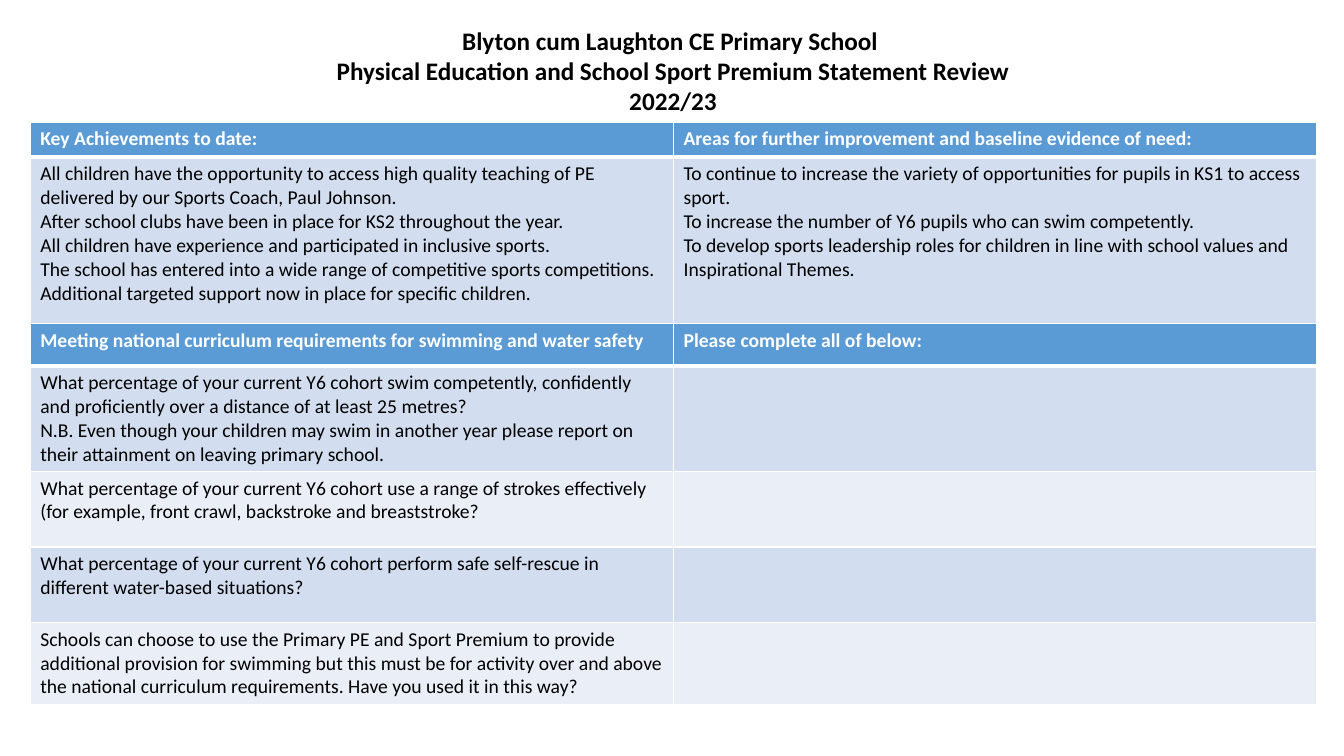
"""Build the PE and sport premium review slide with its two tables."""
from lxml import etree
from pptx import Presentation
from pptx.dml.color import RGBColor
from pptx.enum import text
from pptx.oxml.ns import qn
from pptx.util import Inches, Pt

COLORS = {"white": "FFFFFF", "black": "000000", "header": "5B9BD5",
          "band_dark": "D2DEEF", "band_light": "EAEFF7"}
FONT = "Calibri"
LEFT, COL_WIDTH = 0.3, 6.38

TITLE = [
    "Blyton cum Laughton CE Primary School ",
    "Physical Education and School Sport Premium Statement Review",
    "2022/23",
]

ACHIEVEMENTS = [
    (["Key Achievements to date:"],
     ["Areas for further improvement and baseline evidence of need:"]),
    (["All children have the opportunity to access high quality teaching of PE "
      "delivered by our Sports Coach, Paul Johnson.",
      "After school clubs have been in place for KS2 throughout the year.",
      "All children have experience and participated in inclusive sports.",
      "The school has entered into a wide range of competitive sports competitions.",
      "Additional targeted support now in place for specific children."],
     ["To continue to increase the variety of opportunities for pupils in KS1 to access sport.",
      "To increase the number of Y6 pupils who can swim competently.",
      "To develop sports leadership roles for children in line with school values and "
      "Inspirational Themes."]),
]

SWIMMING = [
    (["Meeting national curriculum requirements for swimming and water safety"],
     ["Please complete all of below:"]),
    (["What percentage of your current Y6 cohort swim competently, confidently and "
      "proficiently over a distance of at least 25 metres?",
      "N.B. Even though your children may swim in another year please report on their "
      "attainment on leaving primary school."], []),
    (["What percentage of your current Y6 cohort use a range of strokes effectively "
      "(for example, front crawl, backstroke and breaststroke?"], []),
    (["What percentage of your current Y6 cohort perform safe self-rescue in different "
      "water-based situations?"], []),
    (["Schools can choose to use the Primary PE and Sport Premium to provide additional "
      "provision for swimming but this must be for activity over and above the national "
      "curriculum requirements. Have you used it in this way?"], []),
]

TABLES = [
    (1.21, [0.35, 1.73], ACHIEVEMENTS),
    (3.21, [0.42, 1.03, 0.75, 0.75, 0.79], SWIMMING),
]


def rgb(name):
    return RGBColor.from_string(COLORS[name])


def write(tf, lines, size, color, bold, align=None):
    for i, line in enumerate(lines):
        p = tf.paragraphs[0] if i == 0 else tf.add_paragraph()
        p.alignment = align
        r = p.add_run()
        r.text = line
        r.font.name, r.font.size, r.font.bold = FONT, Pt(size), bold
        r.font.color.rgb = rgb(color)


def add_borders(cell, widths):
    tc_pr = cell._tc.get_or_add_tcPr()
    for i, (side, width) in enumerate(widths.items()):
        ln = etree.Element(qn(f"a:ln{side}"), w=str(Pt(width)))
        fill = etree.SubElement(ln, qn("a:solidFill"))
        etree.SubElement(fill, qn("a:srgbClr"), val=COLORS["white"])
        tc_pr.insert(i, ln)


def add_review_table(s, top, heights, rows):
    frame = s.shapes.add_table(len(rows), 2, Inches(LEFT), Inches(top),
                               Inches(2 * COL_WIDTH), Inches(sum(heights)))
    table = frame.table
    for col in table.columns:
        col.width = Inches(COL_WIDTH)
    for i, (height, row) in enumerate(zip(heights, rows)):
        table.rows[i].height = Inches(height)
        header = i == 0
        fill = "header" if header else "band_dark" if i % 2 else "band_light"
        for j, lines in enumerate(row):
            cell = table.cell(i, j)
            cell.fill.solid()
            cell.fill.fore_color.rgb = rgb(fill)
            add_borders(cell, {"L": 1, "R": 1, "T": 3 if i == 1 else 1,
                               "B": 3 if header else 1})
            write(cell.text_frame, lines, 14, "white" if header else "black", header)


def main():
    prs = Presentation()
    prs.slide_width, prs.slide_height = Inches(13.33), Inches(7.5)
    s = prs.slides.add_slide(prs.slide_layouts[5])
    title = s.shapes.title
    title.left, title.top = Inches(1.73), Inches(0.2)
    title.width, title.height = Inches(9.89), Inches(1.01)
    tf = title.text_frame
    tf.word_wrap = True
    tf.auto_size = text.MSO_AUTO_SIZE.NONE
    tf.vertical_anchor = text.MSO_ANCHOR.TOP
    write(tf, TITLE, 18, "black", True, text.PP_ALIGN.CENTER)
    for top, heights, rows in TABLES:
        add_review_table(s, top, heights, rows)
    prs.save("out.pptx")


if __name__ == "__main__":
    main()
